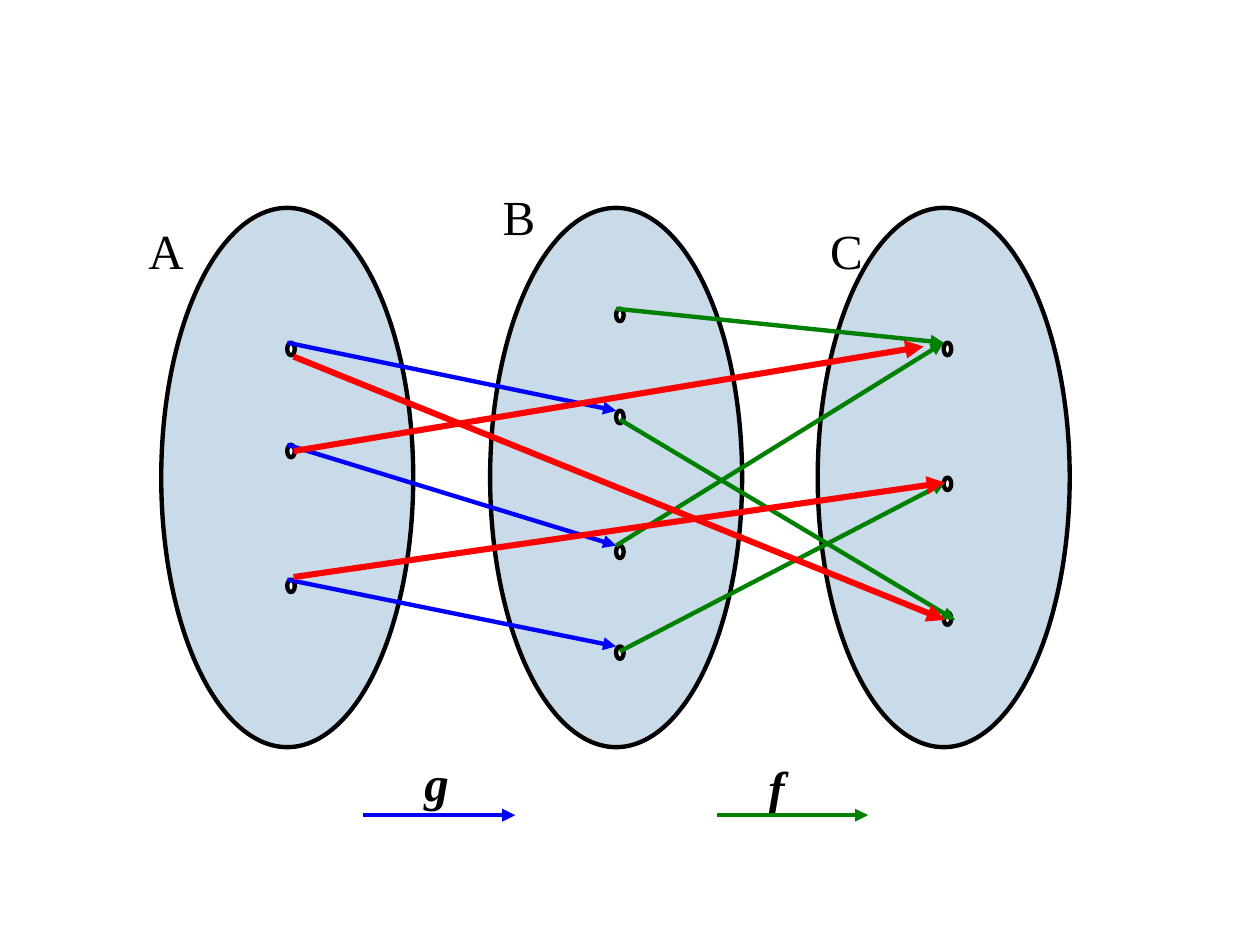
from lxml import etree
from pptx import Presentation
from pptx.dml.color import RGBColor
from pptx.enum.shapes import MSO_CONNECTOR, MSO_SHAPE
from pptx.enum.text import PP_ALIGN
from pptx.oxml.ns import qn
from pptx.util import Inches, Pt

BLACK = RGBColor(0x00, 0x00, 0x00)
WHITE = RGBColor(0xFF, 0xFF, 0xFF)
SET_BLUE = RGBColor(0x94, 0xB6, 0xD2)
BLUE = RGBColor(0x00, 0x00, 0xFF)
GREEN = RGBColor(0x00, 0x80, 0x00)
RED = RGBColor(0xFF, 0x00, 0x00)

presentation = Presentation()
presentation.slide_width = Inches(10)
presentation.slide_height = Inches(7.5)
slide = presentation.slides.add_slide(presentation.slide_layouts[6])


def add_ellipse(left, top, width, height, color, opacity=100):
    shape = slide.shapes.add_shape(
        MSO_SHAPE.OVAL, Inches(left), Inches(top), Inches(width), Inches(height))
    shape.shadow.inherit = False
    shape.fill.solid()
    shape.fill.fore_color.rgb = color
    shape.line.color.rgb = BLACK
    shape.line.width = Pt(2.5)
    if opacity < 100:
        color_element = shape._element.spPr.find(qn("a:solidFill"))[0]
        etree.SubElement(color_element, qn("a:alpha"), val=str(opacity * 1000))


def add_label(text, left, top, width, bold=False, italic=False):
    box = slide.shapes.add_textbox(
        Inches(left), Inches(top), Inches(width), Inches(0.8))
    frame = box.text_frame
    frame.word_wrap = True
    frame.margin_top = Inches(0.09)
    paragraph = frame.paragraphs[0]
    paragraph.alignment = PP_ALIGN.JUSTIFY
    run = paragraph.add_run()
    run.text = text
    run.font.name = "Times New Roman"
    run.font.size = Pt(28)
    run.font.bold = bold
    run.font.italic = italic
    run.font.color.rgb = BLACK


# Sets A, B and C, and the tops of the elements in each
set_lefts = [1.28, 3.89, 6.49]
element_tops = [
    [2.72, 3.53, 4.6],
    [2.45, 3.26, 4.33, 5.13],
    [2.72, 3.79, 4.86],
]
for left in set_lefts:
    add_ellipse(left, 1.65, 2, 4.28, SET_BLUE, opacity=50)
for left, tops in zip(set_lefts, element_tops):
    for top in tops:
        add_ellipse(left + 1, top, 0.06, 0.1, WHITE)

# Labels of the sets and the functions
add_label("A", 1.08, 1.66, 0.6)
add_label("B", 3.89, 1.39, 0.8)
add_label("C", 6.49, 1.66, 0.8)
add_label("g", 3.27, 5.88, 0.6, bold=True, italic=True)
add_label("f", 6, 5.92, 0.6, bold=True, italic=True)

# Arrows: g in blue, f in green, the composition in red
arrows = [
    (BLUE, 2.5, [
        (2.88, 6.47, 4.09, 6.47),
        (2.28, 2.72, 4.89, 3.26),
        (2.28, 3.53, 4.89, 4.33),
        (2.28, 4.6, 4.89, 5.13),
    ]),
    (GREEN, 2.5, [
        (5.69, 6.47, 6.89, 6.47),
        (4.89, 2.45, 7.49, 2.72),
        (4.89, 4.33, 7.49, 2.72),
        (4.92, 3.33, 7.58, 4.92),
        (4.92, 5.17, 7.5, 3.83),
    ]),
    (RED, 3.5, [
        (2.33, 2.83, 7.5, 4.92),
        (2.33, 3.58, 7.33, 2.75),
        (2.33, 4.58, 7.5, 3.83),
    ]),
]
for color, width, segments in arrows:
    for segment in segments:
        arrow = slide.shapes.add_connector(
            MSO_CONNECTOR.STRAIGHT, *[Inches(value) for value in segment])
        arrow.line.color.rgb = color
        arrow.line.width = Pt(width)
        etree.SubElement(arrow.line._get_or_add_ln(), qn("a:tailEnd"), type="triangle")
        etree.SubElement(arrow._element.spPr, qn("a:effectLst"))

presentation.save("out.pptx")
